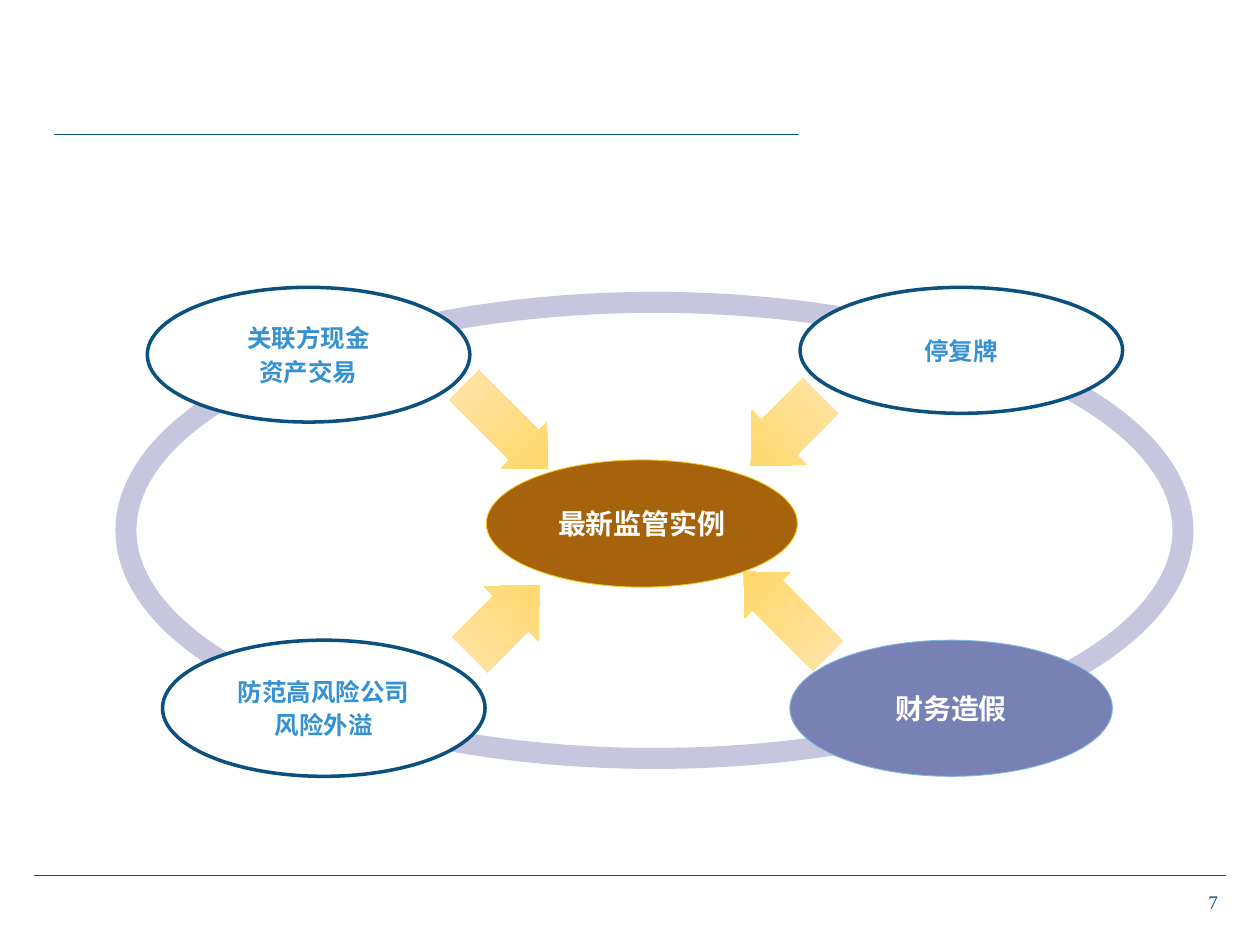
from pptx import Presentation
from pptx.dml.color import RGBColor
from pptx.enum.shapes import MSO_CONNECTOR as Conn, MSO_SHAPE as Kind
from pptx.enum.text import MSO_ANCHOR as Anchor, PP_ALIGN as Align
from pptx.oxml.ns import qn
from pptx.util import Pt
from lxml.etree import SubElement

NAVY, SKY, WHITE = "0C507F", "3591D2", "FFFFFF"


def tint(code):
    return RGBColor.from_string(code)


class Page:
    """Holds the style and the slide being drawn."""

    font = "Arial"
    gap = 2.3
    fade = ("FFD55A", "FFE5AF")
    head = (0.65, 0.52)

    def __init__(self, slide):
        self.shapes = slide.shapes

    def rule(self, left, right, y):
        line = self.shapes.add_connector(Conn.STRAIGHT, Pt(left), Pt(y), Pt(right), Pt(y))
        line.line.color.rgb = tint(NAVY)
        line.line.width = Pt(0.5)
        SubElement(line._element.spPr, qn("a:effectLst"))

    def shape(self, kind, box):
        item = self.shapes.add_shape(kind, *map(Pt, box))
        item.shadow.inherit = False
        return item

    def text(self, frame, rows, align, color, size, name=font, bold=True):
        for side in ("left", "top", "right", "bottom"):
            setattr(frame, f"margin_{side}", 0)
        frame.word_wrap = True
        looks = {"name": name, "size": Pt(size), "bold": bold}
        for i, row in enumerate(rows):
            para = frame.add_paragraph() if i else frame.paragraphs[0]
            para.alignment = align
            if i:
                para.space_before = Pt(self.gap)
            run = para.add_run()
            run.text = row
            run.font.color.rgb = tint(color)
            for key, value in looks.items():
                setattr(run.font, key, value)

    def oval(self, box, fill, edge, width, rows=(), color=SKY, size=14):
        item = self.shape(Kind.OVAL, box)
        if fill:
            item.fill.solid()
            item.fill.fore_color.rgb = tint(fill)
        else:
            item.fill.background()
        item.line.color.rgb = tint(edge)
        item.line.width = Pt(width)
        if rows:
            item.text_frame.vertical_anchor = Anchor.MIDDLE
            self.text(item.text_frame, rows, Align.CENTER, color, size)

    def arrow(self, box, turn):
        item = self.shape(Kind.UP_ARROW, box)
        item.rotation = turn
        for i, value in enumerate(self.head):
            item.adjustments[i] = value
        item.fill.gradient()
        item.fill.gradient_angle = 270
        for stop, code in zip(item.fill.gradient_stops, self.fade):
            stop.color.rgb = tint(code)
        item.line.fill.background()

    def label(self, box, words, color, size, name, bold):
        item = self.shapes.add_textbox(*map(Pt, box))
        self.text(item.text_frame, [words], Align.LEFT, color, size, name, bold)


def main():
    deck = Presentation()
    deck.slide_width, deck.slide_height = Pt(720), Pt(540)
    page = Page(deck.slides.add_slide(deck.slide_layouts[6]))

    page.rule(19.4, 700.6, 500.4)
    page.rule(31, 456.5, 77)
    page.oval((72, 172.8, 604, 260.6), None, "C6C7DE", 12)
    page.oval((277.9, 262.8, 177.8, 72.7), "A6630B", "FFC722", 0.5,
              ["最新监管实例"], WHITE, 16)

    short, long = (43.9, 56.2), (36.7, 67.7)
    for spot, size, turn in (((427, 218.2), short, 225), ((270.7, 210.2), long, 135),
                             ((430.6, 316.8), long, 315), ((266.4, 326.2), short, 45)):
        page.arrow(spot + size, turn)

    wide, top, low = 184.3, 164.2, 365.8
    for left, y, high, rows in ((84.2, top, 77, ["关联方现金", "资产交易"]),
                                (457.2, top, 72, ["停复牌"]),
                                (92.9, low, 77.8, ["防范高风险公司", "风险外溢"])):
        page.oval((left, y, wide, high), WHITE, NAVY, 2, rows)
    page.oval((451.4, low, wide, 77.8), "7881B4", "7DB8E2", 0.5,
              ["财务造假"], WHITE, 16)
    page.label((690.5, 509, 15.8, 17.3), "7", NAVY, 11, "Times New Roman", False)
    deck.save("out.pptx")


if __name__ == "__main__":
    main()
